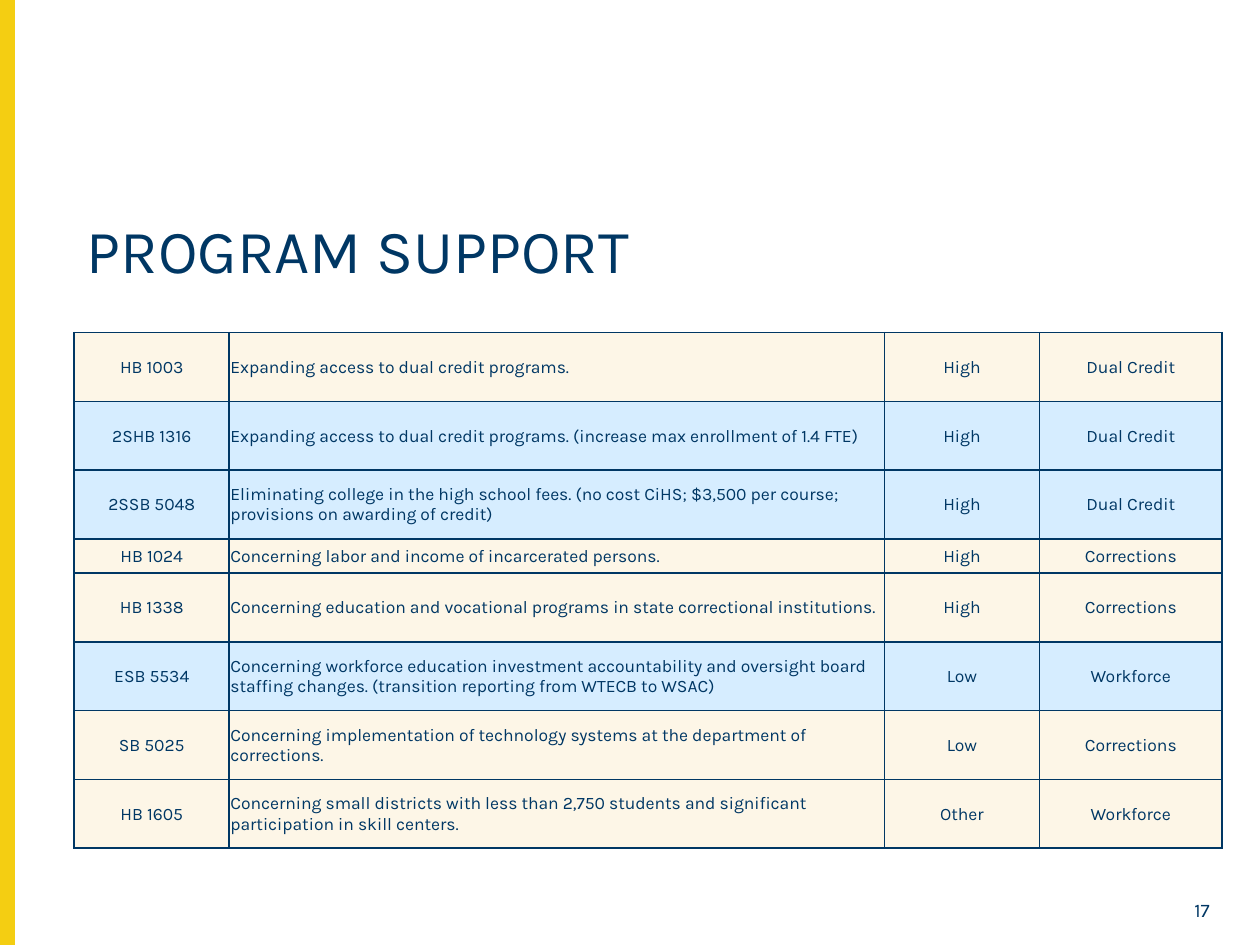
from lxml.etree import SubElement
from pptx import Presentation
from pptx.dml.color import RGBColor
from pptx.enum.shapes import MSO_SHAPE
from pptx.enum.text import MSO_ANCHOR as ANCHOR, PP_ALIGN as ALIGN
from pptx.oxml.ns import qn
from pptx.util import Pt

NAVY = RGBColor(0x00, 0x37, 0x64)
YELLOW = RGBColor(0xF4, 0xCE, 0x12)
CREAM = RGBColor(0xFD, 0xF6, 0xE7)
SKY = RGBColor(0xD6, 0xED, 0xFF)
FONT = "Karla"

COL_WIDTHS = [88.6, 374.4, 88.6, 104.4]
ROW_HEIGHT, SHORT_ROW_HEIGHT = 39.3, 19.6
SHORT_BILL = "HB 1024"
SKY_BILLS = {"2SHB 1316", "2SSB 5048", "ESB 5534"}
CELL_FORMAT = {
    "margin_left": Pt(0.7), "margin_right": Pt(0.7),
    "margin_top": Pt(0.7), "margin_bottom": 0,
    "vertical_anchor": ANCHOR.MIDDLE,
}

# Bill, description, priority, topic
BILLS = [
    ("HB 1003", "Expanding access to dual credit programs.", "High", "Dual Credit"),
    ("2SHB 1316", "Expanding access to dual credit programs. "
     "(increase max enrollment of 1.4 FTE)", "High", "Dual Credit"),
    ("2SSB 5048", "Eliminating college in the high school fees. (no cost CiHS; "
     "$3,500 per course; provisions on awarding of credit)", "High", "Dual Credit"),
    ("HB 1024", "Concerning labor and income of incarcerated persons.",
     "High", "Corrections"),
    ("HB 1338", "Concerning education and vocational programs in state "
     "correctional institutions.", "High", "Corrections"),
    ("ESB 5534", "Concerning workforce education investment accountability and "
     "oversight board staffing changes. (transition reporting from WTECB to WSAC)",
     "Low", "Workforce"),
    ("SB 5025", "Concerning implementation of technology systems at the "
     "department of corrections.", "Low", "Corrections"),
    ("HB 1605", "Concerning small districts with less than 2,750 students and "
     "significant participation in skill centers.", "Other", "Workforce"),
]


def set_format(obj, values):
    for name, value in values.items():
        setattr(obj, name, value)


def write_text(tf, text, size, align):
    p = tf.paragraphs[0]
    p.alignment = align
    r = p.add_run()
    r.text = text
    set_format(r.font, {"name": FONT, "size": Pt(size)})
    r.font.color.rgb = NAVY
    return p


def add_text(s, box, text, size, align, anchor):
    tf = s.shapes.add_textbox(*map(Pt, box)).text_frame
    set_format(tf, {"word_wrap": True, "vertical_anchor": anchor})
    return write_text(tf, text, size, align)


def add_side_bar(s, height):
    sp = s.shapes.add_shape(MSO_SHAPE.RECTANGLE, 0, 0, Pt(8), height)
    sp.shadow.inherit = False
    sp.fill.solid()
    sp.fill.fore_color.rgb = YELLOW
    sp.line.color.rgb = YELLOW
    sp.line.width = Pt(1)


def add_borders(cell):
    # Borders must come before the fill in the cell properties
    tc_pr = cell._tc.get_or_add_tcPr()
    for side in ("lnL", "lnR", "lnT", "lnB"):
        ln = SubElement(tc_pr, qn(f"a:{side}"), w=str(Pt(1)))
        fill = SubElement(ln, qn("a:solidFill"))
        SubElement(fill, qn("a:srgbClr"), val=str(NAVY))


def fill_cell(cell, text, align, color):
    set_format(cell, CELL_FORMAT)
    add_borders(cell)
    cell.fill.solid()
    cell.fill.fore_color.rgb = color
    write_text(cell.text_frame, text, 10, align)


def add_bill_table(s, left, top):
    heights = [SHORT_ROW_HEIGHT if bill[0] == SHORT_BILL else ROW_HEIGHT
               for bill in BILLS]
    table = s.shapes.add_table(len(BILLS), len(COL_WIDTHS), Pt(left), Pt(top),
                               Pt(sum(COL_WIDTHS)), Pt(sum(heights))).table
    set_format(table, {"first_row": False, "horz_banding": False})
    for column, width in zip(table.columns, COL_WIDTHS):
        column.width = Pt(width)
    for row, height, bill in zip(table.rows, heights, BILLS):
        row.height = Pt(height)
        color = SKY if bill[0] in SKY_BILLS else CREAM
        for i, (cell, text) in enumerate(zip(row.cells, bill)):
            fill_cell(cell, text, ALIGN.LEFT if i == 1 else ALIGN.CENTER, color)


def main():
    prs = Presentation()
    set_format(prs, {"slide_width": Pt(720), "slide_height": Pt(540)})
    s = prs.slides.add_slide(prs.slide_layouts[6])

    # Side bar and title
    add_side_bar(s, prs.slide_height)
    title = add_text(s, (42.5, 122.4, 656.6, 62.6), "PROGRAM SUPPORT", 35,
                     ALIGN.LEFT, ANCHOR.TOP)
    title.line_spacing = 0.9

    # Bills
    add_bill_table(s, 42.4, 190)

    # Page number
    add_text(s, (661.7, 510.5, 36.7, 18.7), "17", 11, ALIGN.RIGHT, ANCHOR.MIDDLE)

    prs.save("out.pptx")


if __name__ == "__main__":
    main()
